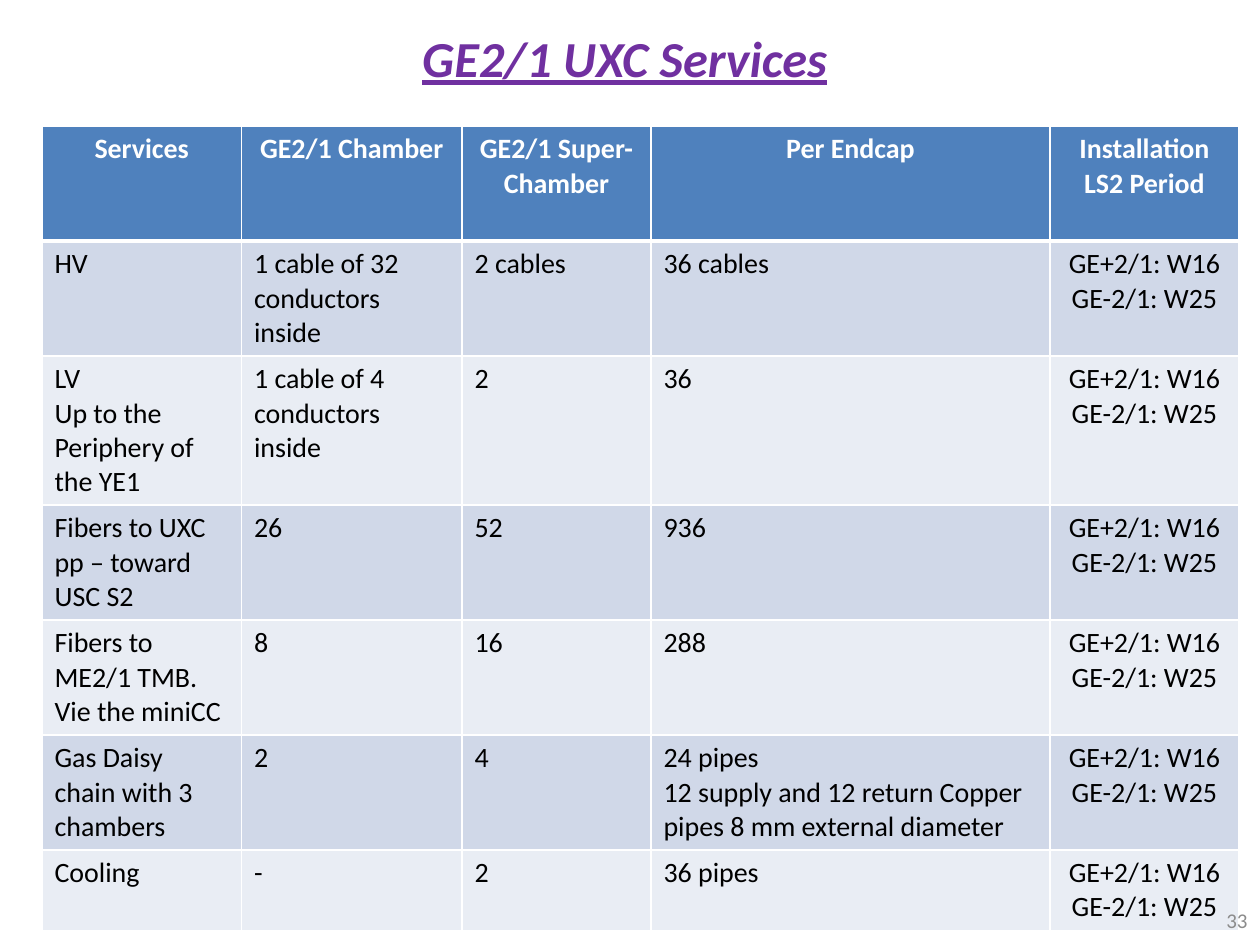
from lxml.etree import SubElement
from pptx import Presentation
from pptx.dml.color import RGBColor
from pptx.enum.text import MSO_ANCHOR as Anchor, PP_ALIGN as Align
from pptx.oxml.ns import qn
from pptx.util import Pt

TITLE = "GE2/1 UXC Services"
PAGE_NUMBER = "33"
HEADER = ["Services", "GE2/1 Chamber", "GE2/1 Super-Chamber", "Per Endcap",
          "Installation\nLS2 Period"]
PERIOD = ("GE+2/1: W16", "GE-2/1: W25")
# A tuple holds the paragraphs of one cell
SERVICES = [
    ["HV", "1 cable of 32 conductors inside", "2 cables", "36 cables"],
    [("LV", "Up to the Periphery of the YE1"), "1 cable of 4 conductors inside", "2", "36"],
    ["Fibers to UXC pp – toward USC S2", "26", "52", "936"],
    ["Fibers to ME2/1 TMB. Vie the miniCC", "8", "16", "288"],
    ["Gas Daisy chain with 3 chambers", "2", "4",
     ("24 pipes", "12 supply and 12 return Copper pipes 8 mm external diameter")],
    ["Cooling", "-", "2", "36 pipes"],
]
ROWS = [HEADER] + [service + [PERIOD] for service in SERVICES]
COLUMN_WIDTHS = [114, 126, 108, 228, 108]
LINES_PER_ROW = [3, 3, 4, 3, 3, 3, 2]
LINE_HEIGHT, ROW_PADDING = 19.5, 7.2
HEADER_FILL, BAND_FILLS = "4F81BD", ["D0D8E8", "E9EDF4"]


def color(hex_string):
    return RGBColor.from_string(hex_string)


def write(frame, text, size=16, ink="000000", align=Align.LEFT,
          bold=False, italic=False, underline=False):
    paragraphs = text if isinstance(text, tuple) else (text,)
    for i, line in enumerate(paragraphs):
        paragraph = frame.add_paragraph() if i else frame.paragraphs[0]
        paragraph.text = line
        paragraph.alignment = align
        for run in paragraph.runs:
            font = run.font
            font.name, font.size = "Calibri", Pt(size)
            font.bold, font.italic, font.underline = bold, italic, underline
            font.color.rgb = color(ink)


def add_label(slide, box, text, **style):
    frame = slide.shapes.add_textbox(*map(Pt, box)).text_frame
    frame.word_wrap = True
    frame.vertical_anchor = Anchor.MIDDLE
    write(frame, text, **style)


def set_borders(cell, top=1, bottom=1):
    """Draw white cell borders; call before setting the cell's fill."""
    properties = cell._tc.get_or_add_tcPr()
    for side, width in [("L", 1), ("R", 1), ("T", top), ("B", bottom)]:
        line = SubElement(properties, qn(f"a:ln{side}"), w=str(Pt(width)))
        fill = SubElement(line, qn("a:solidFill"))
        SubElement(fill, qn("a:srgbClr"), val="FFFFFF")


def add_services_table(slide):
    heights = [lines * LINE_HEIGHT + ROW_PADDING for lines in LINES_PER_ROW]
    table = slide.shapes.add_table(
        len(ROWS), len(HEADER), Pt(24), Pt(72),
        Pt(sum(COLUMN_WIDTHS)), Pt(sum(heights))).table
    for column, width in zip(table.columns, COLUMN_WIDTHS):
        column.width = Pt(width)
    for r, (values, height) in enumerate(zip(ROWS, heights)):
        table.rows[r].height = Pt(height)
        is_header = r == 0
        for c, value in enumerate(values):
            cell = table.cell(r, c)
            set_borders(cell, top=3 if r == 1 else 1, bottom=3 if is_header else 1)
            cell.fill.solid()
            cell.fill.fore_color.rgb = color(
                HEADER_FILL if is_header else BAND_FILLS[(r - 1) % 2])
            centred = is_header or value == PERIOD
            write(cell.text_frame, value, bold=is_header,
                  ink="FFFFFF" if is_header else "000000",
                  align=Align.CENTER if centred else Align.LEFT)


def main():
    deck = Presentation()
    deck.slide_width, deck.slide_height = Pt(720), Pt(540)
    slide = deck.slides.add_slide(deck.slide_layouts[6])
    add_label(slide, (114, 12, 486, 42), TITLE, size=28.8, ink="7030A0",
              align=Align.CENTER, bold=True, italic=True, underline=True)
    add_services_table(slide)
    add_label(slide, (552, 511, 168, 29), PAGE_NUMBER, size=12, ink="8C8C8C",
              align=Align.RIGHT)
    deck.save("out.pptx")


if __name__ == "__main__":
    main()
